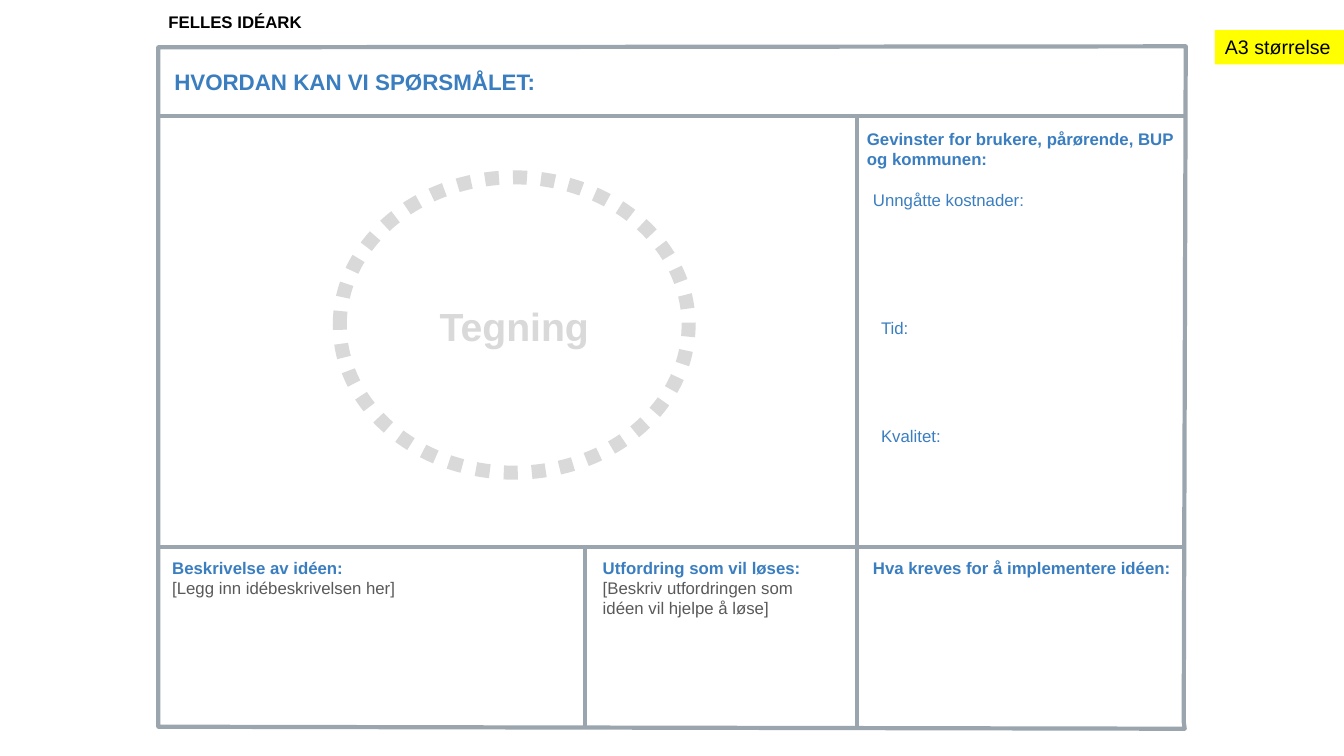
from dataclasses import dataclass

from lxml import etree
from pptx import Presentation
from pptx import util as u
from pptx.dml.color import RGBColor
from pptx.enum import dml, shapes, text
from pptx.oxml.ns import qn

PX = u.Inches(1) // 100


@dataclass(frozen=True)
class Theme:
    font: str = "Arial"
    blue: str = "3A7EC0"
    frame: str = "9BA5AE"
    sketch: str = "D9D9D9"
    hint: str = "595959"
    black: str = "000000"
    yellow: str = "FFFF00"
    body: int = 12
    note: int = 14
    question: int = 16
    drawing: int = 28
    rule: int = 3
    dots: int = 10


THEME = Theme()
LEFT, RIGHT, TOP, BOTTOM = 157, 1176, 46, 723
HEADER_BOTTOM, LOWER_TOP = 115, 543
IDEA_RIGHT, MAIN_RIGHT = 580, 850


def px(*lengths):
    return [u.Emu(length * PX) for length in lengths]


def rgb(color):
    return RGBColor.from_string(color)


def style_line(shape, color, width):
    shape.line.color.rgb = rgb(color)
    shape.line.width = u.Pt(width)


def format_paragraph(paragraph, size, color, bold=False, align=text.PP_ALIGN.LEFT):
    paragraph.alignment = align
    for run in paragraph.runs:
        run.font.name = THEME.font
        run.font.size = u.Pt(size)
        run.font.bold = bold
        run.font.color.rgb = rgb(color)


def add_text(parent, box, words, size=THEME.body, color=THEME.blue, bold=False,
             align=text.PP_ALIGN.LEFT, anchor=text.MSO_ANCHOR.TOP):
    frame = parent.add_textbox(*px(*box)).text_frame
    frame.word_wrap = True
    frame.vertical_anchor = anchor
    frame.text = words
    format_paragraph(frame.paragraphs[0], size, color, bold, align)
    return frame


def add_rule(slide, *ends):
    rule = slide.shapes.add_connector(shapes.MSO_CONNECTOR.STRAIGHT, *px(*ends))
    style_line(rule, THEME.frame, THEME.rule)
    etree.SubElement(rule._element.spPr, qn("a:effectLst"))


def add_frame(slide):
    """Draw the slightly uneven border and the rules that divide it."""
    builder = slide.shapes.build_freeform(RIGHT - 2, BOTTOM - 7, scale=PX)
    builder.add_line_segments(
        [(RIGHT, TOP), (LEFT, TOP + 1), (LEFT, BOTTOM - 2), (RIGHT - 1, BOTTOM)])
    border = builder.convert_to_shape()
    border.shadow.inherit = False
    border.fill.background()
    style_line(border, THEME.frame, THEME.rule)
    etree.SubElement(border.line._get_or_add_ln(), qn("a:round"))
    for y in (HEADER_BOTTOM, LOWER_TOP):
        add_rule(slide, LEFT, y, RIGHT, y)
    for x, top in ((MAIN_RIGHT, HEADER_BOTTOM), (IDEA_RIGHT, LOWER_TOP)):
        add_rule(slide, x, top, x, BOTTOM)


def add_title(slide, box):
    title = slide.shapes.title
    title.left, title.top, title.width, title.height = px(*box)
    frame = title.text_frame
    frame.text = "FELLES IDÉARK"
    frame.auto_size = text.MSO_AUTO_SIZE.NONE
    frame.vertical_anchor = text.MSO_ANCHOR.MIDDLE
    format_paragraph(frame.paragraphs[0], THEME.body, THEME.black, bold=True)


def add_drawing_area(slide, box):
    left, top, width, height = box
    group = slide.shapes.add_group_shape()
    add_text(group.shapes, (left + 49, top + 119, 248, 54), "Tegning", THEME.drawing,
             THEME.sketch, bold=True, align=text.PP_ALIGN.CENTER)
    ring = group.shapes.add_shape(shapes.MSO_SHAPE.OVAL, *px(*box))
    ring.shadow.inherit = False
    ring.fill.background()
    style_line(ring, THEME.sketch, THEME.dots)
    ring.line.dash_style = dml.MSO_LINE.ROUND_DOT


def add_benefits(slide, box):
    left, top, width, height = box
    add_text(slide.shapes, (left, top + 8, width, 63),
             "Gevinster for brukere, pårørende, BUP\vog kommunen:", bold=True)
    for label, dx, dy in (("Unngåtte kostnader:", 6, 68),
                          ("Tid:", 14, 195),
                          ("Kvalitet:", 14, 302)):
        add_text(slide.shapes, (left + dx, top + dy, 247, 40), label)


def add_field(slide, box, heading, hint=None):
    frame = add_text(slide.shapes, box, heading, bold=True)
    if hint:
        paragraph = frame.add_paragraph()
        paragraph.text = hint
        format_paragraph(paragraph, THEME.body, THEME.hint)


def add_size_note(slide, box):
    note = slide.shapes.add_shape(shapes.MSO_SHAPE.RECTANGLE, *px(*box))
    note.shadow.inherit = False
    note.fill.solid()
    note.fill.fore_color.rgb = rgb(THEME.yellow)
    note.line.fill.background()
    frame = note.text_frame
    frame.text = "A3 størrelse"
    frame.word_wrap = False
    frame.vertical_anchor = text.MSO_ANCHOR.TOP
    frame.auto_size = text.MSO_AUTO_SIZE.SHAPE_TO_FIT_TEXT
    format_paragraph(frame.paragraphs[0], THEME.note, THEME.black)


def add_idea_sheet(presentation):
    slide = presentation.slides.add_slide(presentation.slide_layouts[5])
    add_title(slide, (LEFT, 8, 339, 28))
    add_frame(slide)
    add_text(slide.shapes, (LEFT + 6, 55, 392, 52), "HVORDAN KAN VI SPØRSMÅLET:",
             THEME.question, bold=True, anchor=text.MSO_ANCHOR.MIDDLE)
    add_drawing_area(slide, (337, 176, 346, 293))
    add_benefits(slide, (MAIN_RIGHT, HEADER_BOTTOM, 327, LOWER_TOP - HEADER_BOTTOM))
    field_top, field_height = LOWER_TOP + 5, 158
    for left, width, heading, hint in (
            (LEFT + 4, 427, "Beskrivelse av idéen:", "[Legg inn idébeskrivelsen her]"),
            (IDEA_RIGHT + 8, 223, "Utfordring som vil løses:",
             "[Beskriv utfordringen som idéen vil hjelpe å løse]"),
            (MAIN_RIGHT + 6, 327, "Hva kreves for å implementere idéen:", None)):
        add_field(slide, (left, field_top, width, field_height), heading, hint)
    add_size_note(slide, (1205, 30, 129, 34))


def main():
    presentation = Presentation()
    presentation.slide_width, presentation.slide_height = px(1333, 750)
    add_idea_sheet(presentation)
    presentation.save("out.pptx")


if __name__ == "__main__":
    main()
